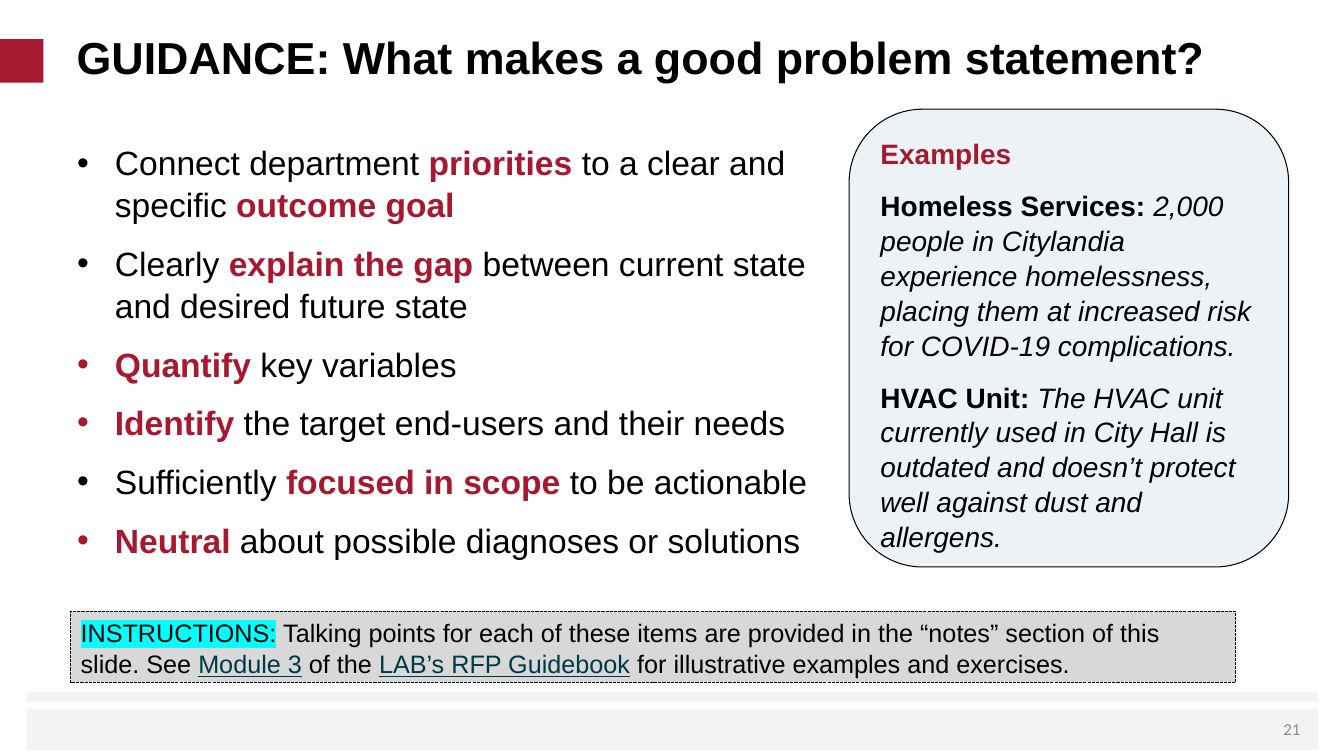
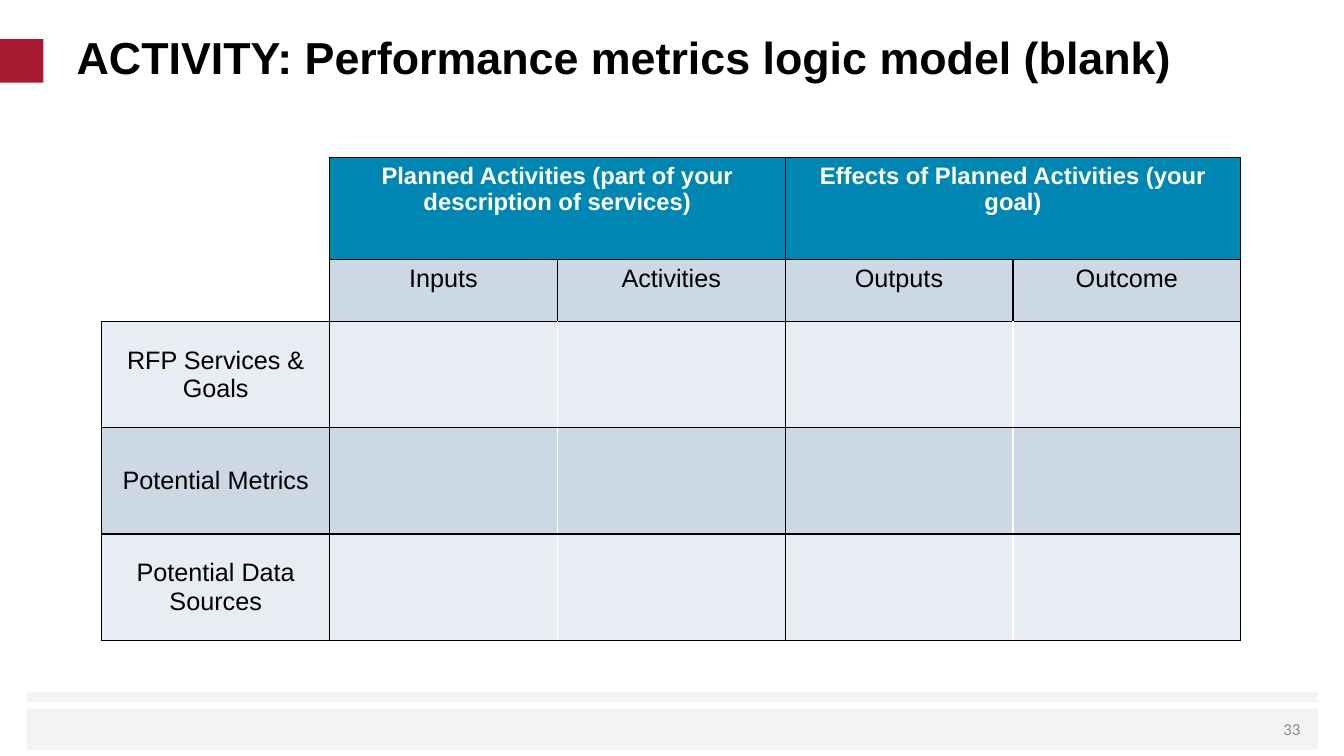
from lxml import etree
from pptx import Presentation
from pptx.dml.color import RGBColor
from pptx.enum.dml import MSO_LINE
from pptx.enum.shapes import MSO_SHAPE
from pptx.enum.text import MSO_ANCHOR, MSO_AUTO_SIZE, PP_ALIGN
from pptx.oxml.ns import qn
from pptx.util import Pt

RECT, ROUND = MSO_SHAPE.RECTANGLE, MSO_SHAPE.ROUNDED_RECTANGLE
DASH = MSO_LINE.SQUARE_DOT
TOP, MID, BASE = MSO_ANCHOR.TOP, MSO_ANCHOR.MIDDLE, MSO_ANCHOR.BOTTOM
LEFT, MIDST, RIGHT = PP_ALIGN.LEFT, PP_ALIGN.CENTER, PP_ALIGN.RIGHT
FIXED = MSO_AUTO_SIZE.NONE

BLACK, WHITE, RED, BAND = "000000", "FFFFFF", "A71930", "F3F3F3"
GREY, SILVER, LINK, CYAN = "8C8C8C", "D8D8D8", "003946", "00FFFF"
BLUE, STEEL, PALE, MIST = "0086B3", "CCD9E5", "E7EDF2", "ECF2F6"

BOLD = {"bold": True}
ITALIC = {"italic": True}
STRONG = {"bold": True, "hue": RED}
LINKED = {"underline": True, "hue": LINK}
MARKED = {"mark": CYAN}

POINTS = [
    [("Connect department ", {}), ("priorities", STRONG),
     (" to a clear and specific ", {}), ("outcome goal", STRONG)],
    [("Clearly ", {}), ("explain the gap ", STRONG),
     ("between current state and desired future state", {})],
    [("Quantify", STRONG), (" key variables", {})],
    [("Identify", STRONG), (" the target end-users and their needs", {})],
    [("Sufficiently ", {}), ("focused in scope ", STRONG), ("to be actionable", {})],
    [("Neutral", STRONG), (" about possible diagnoses or solutions", {})],
]
CASES = [
    [("Examples", STRONG)],
    [("Homeless Services: ", BOLD),
     ("2,000 people in Citylandia experience homelessness, placing them at "
      "increased risk for COVID-19 complications.", ITALIC)],
    [("HVAC Unit: ", BOLD),
     ("The HVAC unit currently used in City Hall is outdated and doesn’t "
      "protect well against dust and allergens.", ITALIC)],
]
STEPS = [
    [("INSTRUCTIONS:", MARKED),
     (" Talking points for each of these items are provided in the “notes” "
      "section of this slide. See ", {}),
     ("Module 3", LINKED), (" of the ", {}), ("LAB’s RFP Guidebook", LINKED),
     (" for illustrative examples and exercises.", {})],
]
HEADS = {1: "Planned Activities (part of your description of services)",
         3: "Effects of Planned Activities (your goal)"}
GRID = [
    ["", "Inputs", "Activities", "Outputs", "Outcome"],
    ["RFP Services & Goals", "", "", "", ""],
    ["Potential Metrics", "", "", "", ""],
    ["Potential Data Sources", "", "", "", ""],
]
FILLS = [BLUE, STEEL, PALE, STEEL, PALE]
HEIGHTS = [73, 44, 76, 76, 76]


def rgb(code):
    return RGBColor.from_string(code)


def put(item, values):
    for name, value in values.items():
        setattr(item, name, value)


def box(values):
    return [Pt(value) for value in values]


def write(frame, paras, size, hue=BLACK, font="Arial", look=None, dots=False):
    for i, parts in enumerate(paras):
        para = frame.add_paragraph() if i else frame.paragraphs[0]
        put(para, {"alignment": LEFT, **(look or {})})
        if dots:
            props = para._p.get_or_add_pPr()
            props.set("marL", str(Pt(27)))
            props.set("indent", str(-Pt(27)))
            etree.SubElement(props, qn("a:buFont"), typeface="Arial")
            etree.SubElement(props, qn("a:buChar"), char="•")
        for words, style in parts:
            style = dict(style)
            tint, mark = style.pop("hue", hue), style.pop("mark", None)
            run = para.add_run()
            run.text = words
            put(run.font, {"name": font, "size": Pt(size), **style})
            run.font.color.rgb = rgb(tint)
            if mark:
                glow = etree.Element(qn("a:highlight"))
                etree.SubElement(glow, qn("a:srgbClr"), val=mark)
                run._r.rPr.find(qn("a:solidFill")).addnext(glow)


def block(slide, kind, place, fill, edge=False, dash=None):
    shape = slide.shapes.add_shape(kind, *box(place))
    shape.shadow.inherit = False
    shape.fill.solid()
    shape.fill.fore_color.rgb = rgb(fill)
    if edge:
        shape.line.color.rgb = rgb(BLACK)
        put(shape.line, {"width": Pt(0.75), "dash_style": dash})
    else:
        shape.line.fill.background()
    put(shape.text_frame, {"word_wrap": True, "vertical_anchor": TOP})
    return shape.text_frame


def label(slide, place, anchor):
    frame = slide.shapes.add_textbox(*box(place)).text_frame
    put(frame, {"word_wrap": True, "vertical_anchor": anchor})
    return frame


def start(deck, title, page):
    slide = deck.slides.add_slide(deck.slide_layouts[5])
    for place, fill in [((19, 494.6, 922.5, 7), BAND),
                        ((19, 506.2, 922.5, 29.5), BAND),
                        ((0, 28, 31, 31), RED)]:
        block(slide, RECT, place, fill)
    head = slide.shapes.title
    put(head, dict(zip(("left", "top", "width", "height"), box((47.5, 21, 864, 42.5)))))
    put(head.text_frame, {"word_wrap": True, "auto_size": FIXED, "vertical_anchor": BASE,
                          "margin_top": 0, "margin_bottom": Pt(3.6),
                          "margin_left": Pt(7.2), "margin_right": Pt(7.2)})
    write(head.text_frame, [[(title, BOLD)]], 32)
    write(label(slide, (882, 506, 54, 29), MID), [[(page, {})]], 12, GREY, "Calibri",
          {"alignment": RIGHT})
    return slide


def edges(cell, white):
    props = cell._tc.get_or_add_tcPr()
    for side in "LRTB":
        line = etree.SubElement(props, qn("a:ln" + side), w=str(Pt(1)))
        fill = etree.SubElement(line, qn("a:solidFill"))
        etree.SubElement(fill, qn("a:srgbClr"), val=WHITE if side in white else BLACK)


def pale(row, col):
    if row < 2:
        return "" if col else ("LTB", "LT")[row]
    return ("L" if col % 2 == 0 else "R") if col else ""


def model(slide):
    count = len(GRID[0])
    wide = 813.6 / count
    frame = slide.shapes.add_table(len(HEIGHTS), count,
                                   *box((72.7, 112.5, wide * count, sum(HEIGHTS))))
    table = frame.table
    put(table, {"first_row": False, "horz_banding": False})
    for column in table.columns:
        column.width = Pt(wide)
    rows = [[HEADS.get(col, "") for col in range(count)], *GRID]
    for r, words in enumerate(rows):
        table.rows[r].height = Pt(HEIGHTS[r])
        for c, text in enumerate(words):
            cell = table.cell(r, c)
            edges(cell, pale(r, c))
            cell.fill.solid()
            cell.fill.fore_color.rgb = rgb(WHITE if r < 2 and c == 0 else FILLS[r])
            cell.vertical_anchor = TOP if r < 2 else MID
            if text:
                size, hue, style = (18, BLACK, {}) if r else (17, WHITE, BOLD)
                write(cell.text_frame, [[(text, style)]], size, hue,
                      look={"alignment": MIDST})
    for c in HEADS:
        table.cell(0, c).merge(table.cell(0, c + 1))


def main():
    deck = Presentation()
    put(deck, {"slide_width": Pt(960), "slide_height": Pt(540)})
    loose = {"line_spacing": 1.04, "space_after": Pt(12)}

    guide = start(deck, "GUIDANCE: What makes a good problem statement?", "21")
    write(label(guide, (48, 97, 564.5, 390), TOP), POINTS, 24, look=loose, dots=True)
    write(block(guide, RECT, (50.5, 436.5, 832, 51), SILVER, True, DASH), STEPS, 18,
          look={"line_spacing": 1.04})
    write(block(guide, ROUND, (606.5, 78, 314, 327), MIST, True), CASES, 20, look=loose)

    model(start(deck, "ACTIVITY: Performance metrics logic model (blank)", "33"))
    deck.save("out.pptx")


if __name__ == "__main__":
    main()
